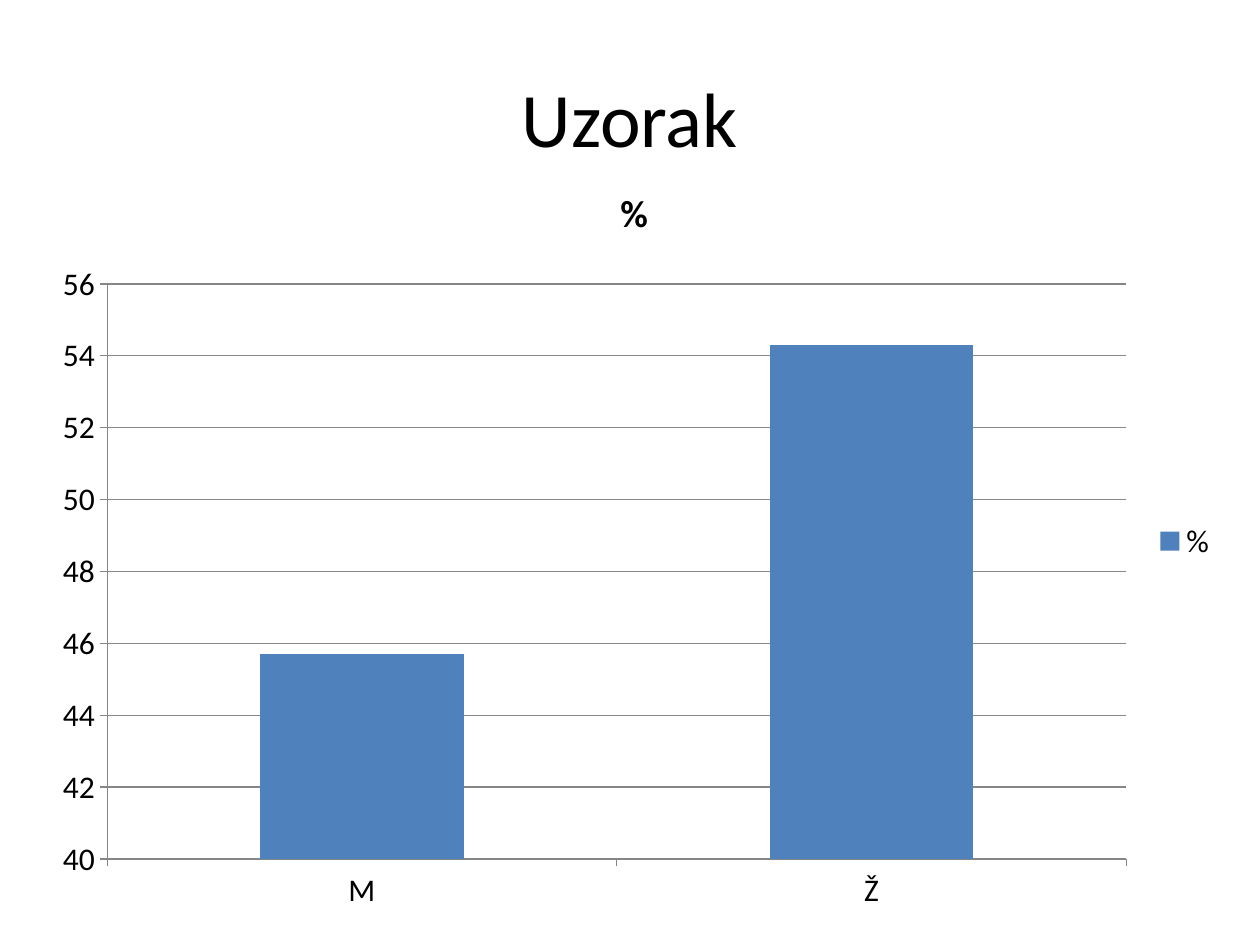
from dataclasses import dataclass

from pptx import Presentation
from pptx.chart.data import CategoryChartData
from pptx.dml.color import RGBColor
from pptx.enum import chart as charts, text
from pptx.util import Pt


@dataclass(frozen=True)
class Theme:
    font: str = "Calibri"
    ink: RGBColor = RGBColor(0, 0, 0)
    paper: RGBColor = RGBColor(255, 255, 255)
    bar: RGBColor = RGBColor(0x4F, 0x81, 0xBD)
    rule: RGBColor = RGBColor(0x86, 0x86, 0x86)
    heading: float = 44
    chart_title: float = 21.6
    label: float = 18
    rule_width: float = 0.75


THEME = Theme()


def style_font(font, size, bold=False):
    font.name = THEME.font
    font.size = Pt(size)
    font.bold = bold
    font.color.rgb = THEME.ink


def style_rule(line):
    line.color.rgb = THEME.rule
    line.width = Pt(THEME.rule_width)


def add_heading(slide, box, wording):
    heading = slide.shapes.add_textbox(*map(Pt, box)).text_frame
    heading.word_wrap = True
    heading.vertical_anchor = text.MSO_ANCHOR.MIDDLE
    paragraph = heading.paragraphs[0]
    paragraph.alignment = text.PP_ALIGN.CENTER
    run = paragraph.add_run()
    run.text = wording
    style_font(run.font, THEME.heading)


def add_sample_chart(slide, box, unit, shares):
    sample = CategoryChartData()
    sample.categories = list(shares)
    sample.add_series(unit, list(shares.values()))
    chart = slide.shapes.add_chart(
        charts.XL_CHART_TYPE.COLUMN_CLUSTERED, *map(Pt, box), sample
    ).chart
    style_font(chart.font, THEME.label)

    chart.has_title = True
    run = chart.chart_title.text_frame.paragraphs[0].add_run()
    run.text = unit
    style_font(run.font, THEME.chart_title, bold=True)
    chart.chart_title.include_in_layout = False

    chart.has_legend = True
    chart.legend.position = charts.XL_LEGEND_POSITION.RIGHT
    chart.legend.include_in_layout = False

    plot = chart.plots[0]
    plot.gap_width = 150
    plot.vary_by_categories = False
    bars = plot.series[0].format.fill
    bars.solid()
    bars.fore_color.rgb = THEME.bar

    for axis in (chart.category_axis, chart.value_axis):
        axis.major_tick_mark = charts.XL_TICK_MARK.OUTSIDE
        axis.minor_tick_mark = charts.XL_TICK_MARK.NONE
        style_rule(axis.format.line)

    percent = chart.value_axis
    percent.minimum_scale, percent.maximum_scale, percent.major_unit = 40, 56, 2
    percent.tick_labels.number_format = "General"
    percent.tick_labels.number_format_is_linked = False
    percent.has_major_gridlines = True
    style_rule(percent.major_gridlines.format.line)


def main():
    deck = Presentation()
    deck.slide_width, deck.slide_height = Pt(720), Pt(540)
    slide = deck.slides.add_slide(deck.slide_layouts[6])
    slide.background.fill.solid()
    slide.background.fill.fore_color.rgb = THEME.paper
    add_heading(slide, (36, 21.6, 648, 90), "Uzorak")
    add_sample_chart(slide, (22.3, 90, 680.4, 438.5), "%", {"M": 45.7, "Ž": 54.3})
    deck.save("out.pptx")


if __name__ == "__main__":
    main()
